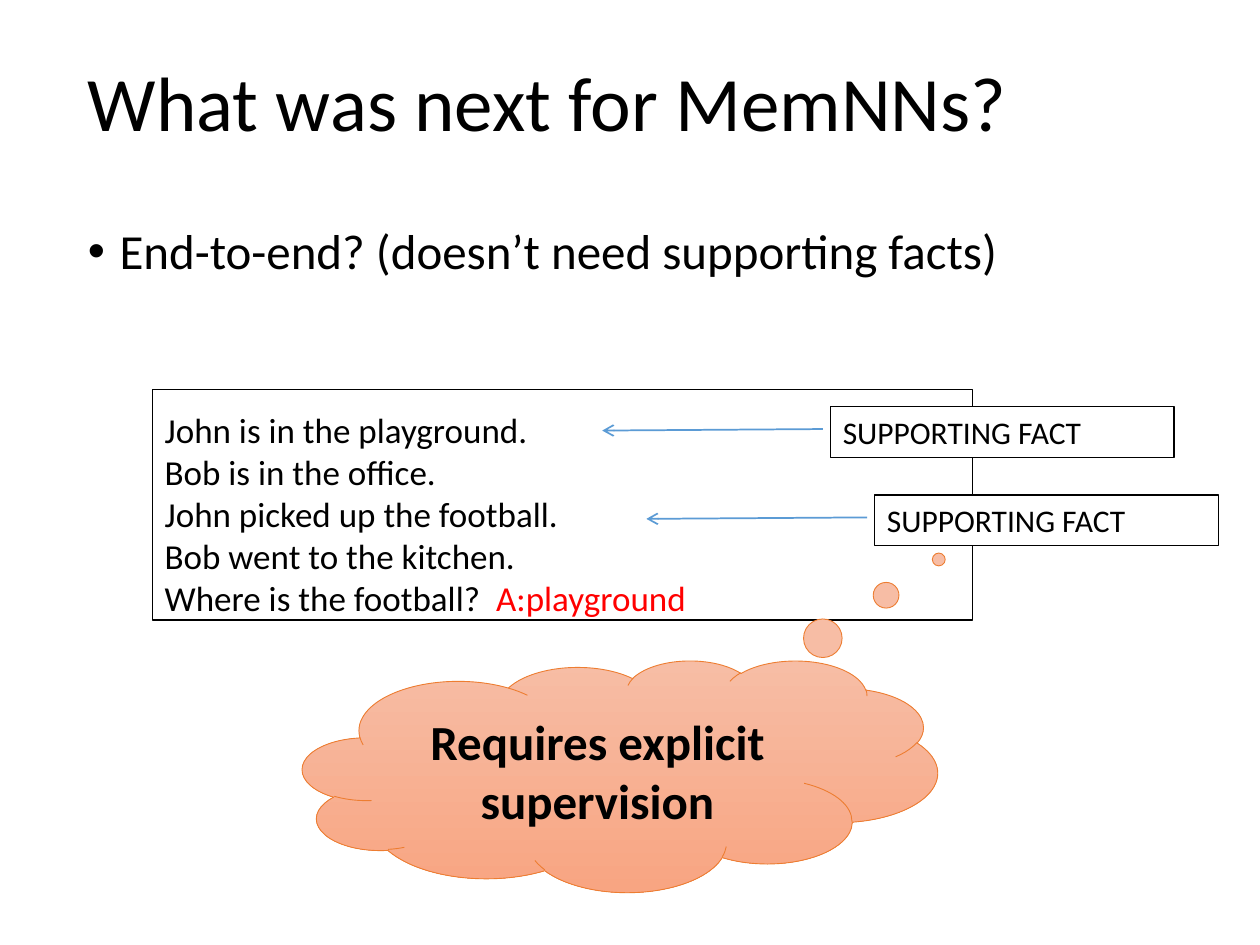
from lxml import etree
from pptx import Presentation
from pptx.dml.color import RGBColor
from pptx.enum.shapes import MSO_CONNECTOR, MSO_SHAPE
from pptx.enum.text import MSO_ANCHOR, PP_ALIGN
from pptx.oxml.ns import qn
from pptx.util import Cm, Pt

RECTANGLE, CLOUD = MSO_SHAPE.RECTANGLE, MSO_SHAPE.CLOUD_CALLOUT
STRAIGHT = MSO_CONNECTOR.STRAIGHT
TOP, MIDDLE = MSO_ANCHOR.TOP, MSO_ANCHOR.MIDDLE
LEFT, CENTER = PP_ALIGN.LEFT, PP_ALIGN.CENTER

FONT = "Calibri"
COLORS = {
    "text": "000000", "answer": "FF0000", "paper": "FFFFFF", "arrow": "5B9BD5",
    "cloud_line": "ED7D31", "cloud_top": "F7BDA5", "cloud_bottom": "F8A582",
}

# Each paragraph is a list of (text, color name) runs.
TITLE = [[("What was next for MemNNs?", "text")]]
POINTS = [[("End-to-end? (doesn’t need supporting facts)", "text")]]
STORY = [
    [("John is in the playground.", "text")],
    [("Bob is in the office.", "text")],
    [("John picked up the football.", "text")],
    [("Bob went to the kitchen.", "text")],
    [("Where is the football?  ", "text"), ("A:playground", "answer")],
]
FACT = [[("SUPPORTING FACT", "text")]]
REMARK = [[("Requires explicit supervision", "text")]]

# Left, top, width, height in centimetres.
TITLE_BOX = (1.52, 0.3, 23.24, 3.71)
POINTS_BOX = (1.52, 4.45, 22.35, 14.6)
STORY_BOX = (3.07, 7.85, 16.54, 4.65)
FACT_SIZE = (6.93, 1.02)
FACT_CORNERS = [(16.74, 8.2), (17.63, 9.98)]
ARROW_START, ARROW_END = (-0.15, 0.45), (-4.6, 0.48)  # from the fact's corner
CLOUD_BOX = (6.1, 13.31, 12.8, 4.67)
CLOUD_TAIL = (0.502, -0.935)


def rgb(name):
    return RGBColor.from_string(COLORS[name])


def lengths(values):
    return [Cm(value) for value in values]


def write(shape, paragraphs, size, bold=False, frame_format=None, paragraph_format=None):
    frame = shape.text_frame
    for name, value in {"word_wrap": True, "vertical_anchor": TOP, **(frame_format or {})}.items():
        setattr(frame, name, value)
    for index, runs in enumerate(paragraphs):
        paragraph = frame.add_paragraph() if index else frame.paragraphs[0]
        for name, value in {"alignment": LEFT, **(paragraph_format or {})}.items():
            setattr(paragraph, name, value)
        for text, color in runs:
            run = paragraph.add_run()
            run.text = text
            for name, value in {"name": FONT, "size": Pt(size), "bold": bold}.items():
                setattr(run.font, name, value)
            run.font.color.rgb = rgb(color)


def add_text(slide, box, *content, **formats):
    shape = slide.shapes.add_textbox(*lengths(box))
    write(shape, *content, **formats)
    return shape


def add_outlined(slide, kind, box, line_color, line_width):
    shape = slide.shapes.add_shape(kind, *lengths(box))
    shape.shadow.inherit = False
    shape.line.color.rgb = rgb(line_color)
    shape.line.width = Pt(line_width)
    return shape


def add_bullet(paragraph):
    properties = paragraph._p.get_or_add_pPr()
    properties.set("marL", str(Cm(0.64)))
    properties.set("indent", str(-Cm(0.64)))
    etree.SubElement(properties, qn("a:buFont"), typeface="Arial")
    etree.SubElement(properties, qn("a:buChar"), char="•")


def add_arrow(slide, start, end):
    arrow = slide.shapes.add_connector(STRAIGHT, *lengths(start + end))
    arrow.line.color.rgb = rgb("arrow")
    arrow.line.width = Pt(1)
    etree.SubElement(arrow.line._get_or_add_ln(), qn("a:tailEnd"), type="arrow")
    etree.SubElement(arrow._element.spPr, qn("a:effectLst"))


def add_fact(slide, corner):
    """Add a label box with an arrow pointing left to its sentence."""
    start, end = [
        (corner[0] + offset[0], corner[1] + offset[1]) for offset in (ARROW_START, ARROW_END)
    ]
    add_arrow(slide, start, end)
    label = add_outlined(slide, RECTANGLE, corner + FACT_SIZE, "text", 0.75)
    label.fill.solid()
    label.fill.fore_color.rgb = rgb("paper")
    write(label, FACT, 18)


def add_cloud(slide):
    cloud = add_outlined(slide, CLOUD, CLOUD_BOX, "cloud_line", 0.5)
    for index, value in enumerate(CLOUD_TAIL):
        cloud.adjustments[index] = value
    cloud.fill.gradient()
    cloud.fill.gradient_angle = 270
    for stop, color, position in zip(
        cloud.fill.gradient_stops, ("cloud_top", "cloud_bottom"), (0, 1)
    ):
        stop.color.rgb = rgb(color)
        stop.position = position
    write(cloud, REMARK, 28, bold=True, frame_format={"vertical_anchor": MIDDLE},
          paragraph_format={"alignment": CENTER})


def main():
    presentation = Presentation()
    presentation.slide_width, presentation.slide_height = Cm(25.4), Cm(19.05)
    slide = presentation.slides.add_slide(presentation.slide_layouts[6])

    add_text(slide, TITLE_BOX, TITLE, 44, frame_format={"vertical_anchor": MIDDLE},
             paragraph_format={"line_spacing": 0.9})
    points = add_text(slide, POINTS_BOX, POINTS, 28,
                      paragraph_format={"line_spacing": 0.9, "space_before": Pt(10)})
    for paragraph in points.text_frame.paragraphs:
        add_bullet(paragraph)

    story = add_outlined(slide, RECTANGLE, STORY_BOX, "text", 0.75)
    story.fill.background()
    write(story, STORY, 20, frame_format={"margin_top": Cm(0.38), "margin_bottom": 0})
    for corner in FACT_CORNERS:
        add_fact(slide, corner)
    add_cloud(slide)
    presentation.save("out.pptx")


if __name__ == "__main__":
    main()
